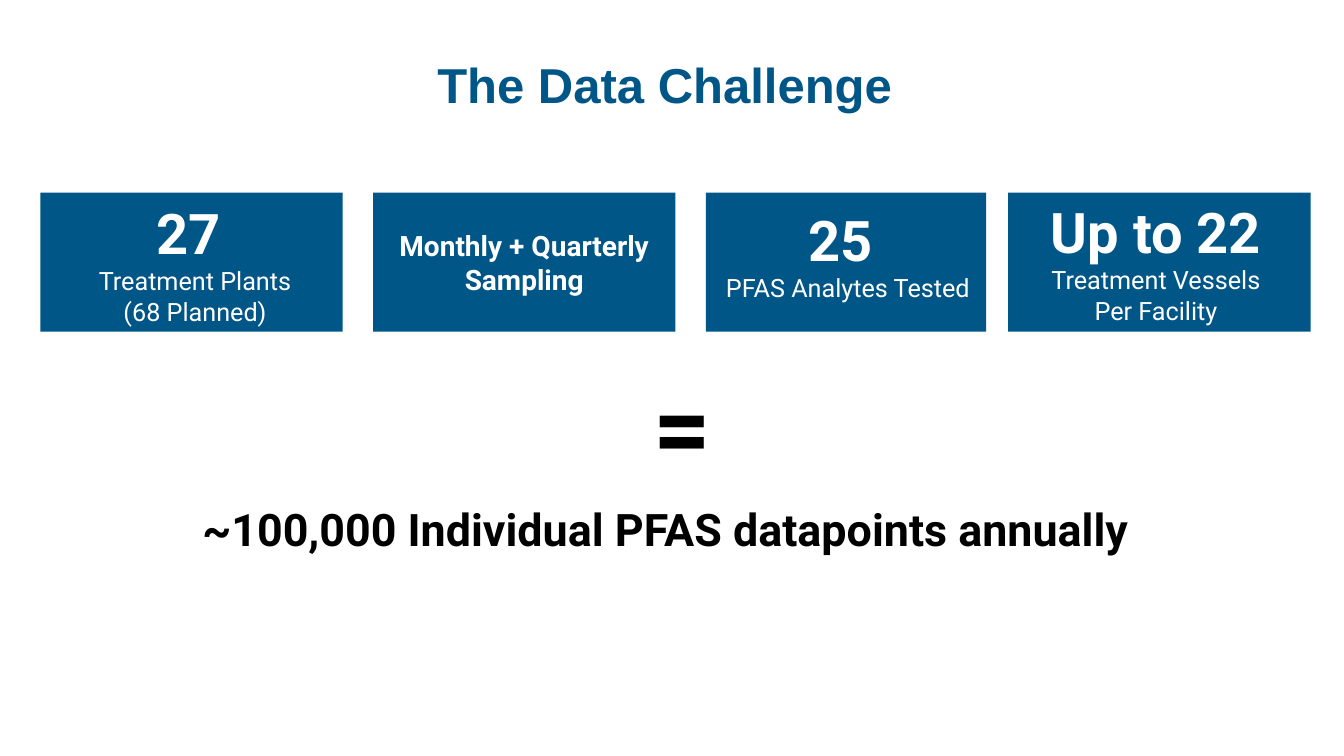
from dataclasses import dataclass

from pptx import Presentation
from pptx import util as u
from pptx.dml.color import RGBColor
from pptx.enum import shapes, text


@dataclass(frozen=True)
class Theme:
    blue: RGBColor = RGBColor(0x00, 0x56, 0x87)
    white: RGBColor = RGBColor(0xFF, 0xFF, 0xFF)
    black: RGBColor = RGBColor(0x00, 0x00, 0x00)
    heading_font: str = "Arial"
    body_font: str = "Roboto"
    title: int = 35
    figure: int = 40
    phrase: int = 20
    label: int = 18
    equals: int = 72
    result: int = 32


class SlideBuilder:
    def __init__(self, presentation, theme):
        self.theme = theme
        self.slide = presentation.slides.add_slide(presentation.slide_layouts[6])
        self.column = presentation.slide_width / 133.3
        self.row = presentation.slide_height / 75

    def place(self, left, top, width, height):
        return (round(left * self.column), round(top * self.row),
                round(width * self.column), round(height * self.row))

    def text(self, area, lines, color, font=None, parent=None, spacing=None,
             anchor=text.MSO_ANCHOR.TOP):
        owner = parent or self.slide
        frame = owner.shapes.add_textbox(*self.place(*area)).text_frame
        frame.word_wrap = True
        frame.vertical_anchor = anchor
        frame.text = "\n".join(words for words, _, _ in lines)
        for paragraph, (_, size, bold) in zip(frame.paragraphs, lines):
            paragraph.alignment = text.PP_ALIGN.CENTER
            if spacing:
                paragraph.line_spacing = spacing
            for run in paragraph.runs:
                run.font.name = font or self.theme.body_font
                run.font.size = u.Pt(size)
                run.font.bold = bold
                run.font.color.rgb = color

    def card(self, left, width, text_area, lines):
        group = self.slide.shapes.add_group_shape()
        shape = group.shapes.add_shape(
            shapes.MSO_SHAPE.RECTANGLE, *self.place(left, 19.1, width, 13.8))
        shape.shadow.inherit = False
        shape.fill.solid()
        shape.fill.fore_color.rgb = self.theme.blue
        shape.line.fill.background()
        self.text(text_area, lines, self.theme.white, parent=group)


def main():
    presentation = Presentation()
    presentation.slide_width = u.Inches(13.33)
    presentation.slide_height = u.Inches(7.5)
    theme = Theme()
    builder = SlideBuilder(presentation, theme)

    builder.text((6.9, 4, 118.1, 9.3), [("The Data Challenge", theme.title, True)],
                 theme.blue, font=theme.heading_font, spacing=0.9,
                 anchor=text.MSO_ANCHOR.MIDDLE)

    cards = [
        (4, 30, (4, 19.2, 30.7, 13.8),
         [("27 ", theme.figure, True),
          ("Treatment Plants", theme.label, False),
          ("(68 Planned)", theme.label, False)]),
        (37, 30, (37.3, 22.2, 29.4, 11.1),
         [("Monthly + Quarterly Sampling", theme.phrase, True)]),
        (70, 27.8, (69.1, 19.9, 30, 10.8),
         [("25 ", theme.figure, True),
          ("PFAS Analytes Tested", theme.label, False)]),
        (100, 30, (101.4, 19.1, 26.5, 13.8),
         [("Up to 22", theme.figure, True),
          ("Treatment Vessels Per Facility", theme.label, False)]),
    ]
    for card in cards:
        builder.card(*card)

    builder.text((50.3, 35.6, 34.7, 13.1), [("=", theme.equals, True)], theme.black)
    builder.text((11.4, 49.3, 110.4, 6.4),
                 [("~100,000 Individual PFAS datapoints annually ", theme.result, True)],
                 theme.black)

    presentation.save("out.pptx")


if __name__ == "__main__":
    main()
